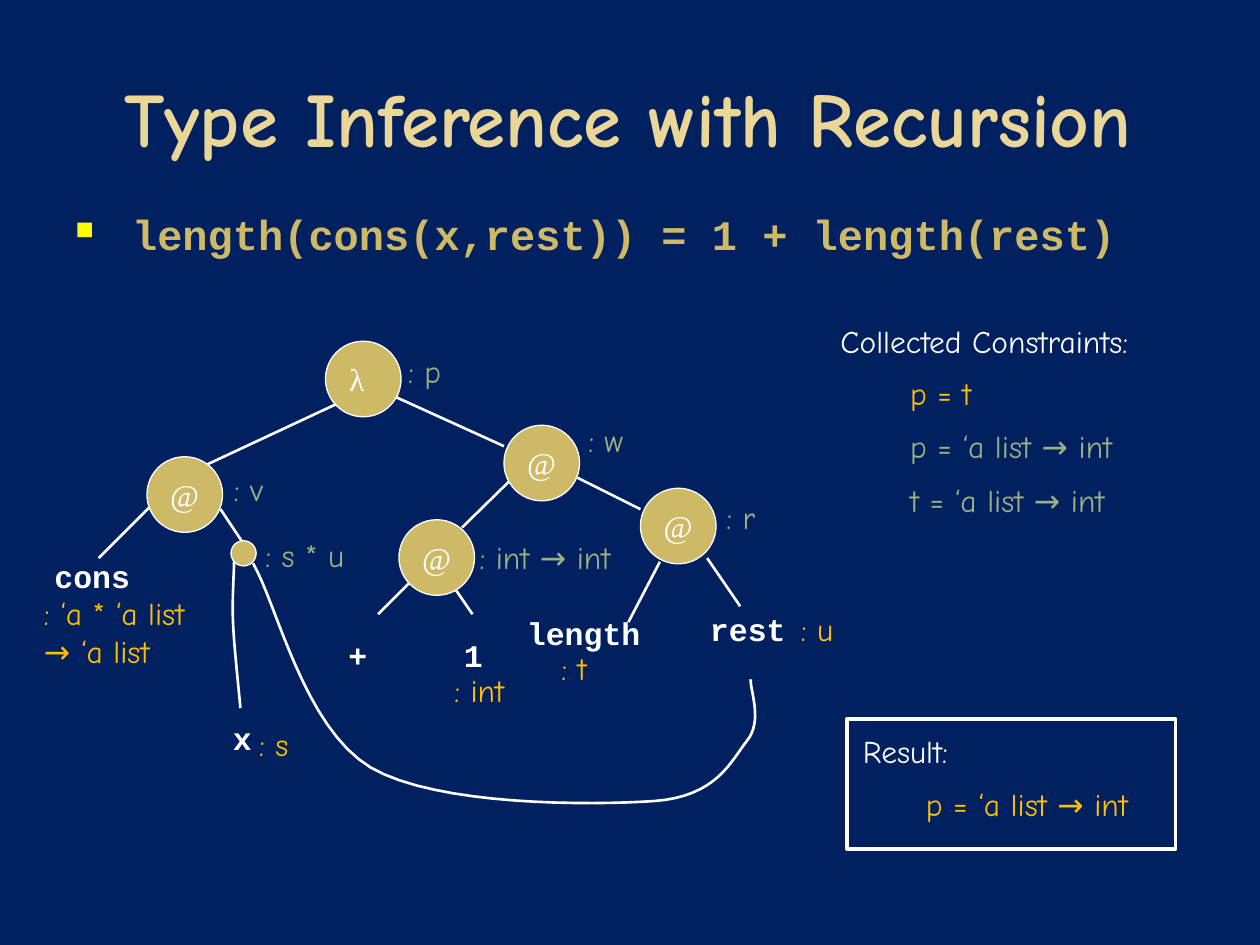
"""Build a slide on type inference for a recursive length function."""
from lxml import etree
from pptx import Presentation
from pptx.dml.color import RGBColor
from pptx.enum.shapes import MSO_CONNECTOR, MSO_SHAPE
from pptx.enum.text import MSO_ANCHOR, PP_ALIGN
from pptx.oxml.ns import qn
from pptx.util import Inches, Pt

LEFT, CENTER, RIGHT = PP_ALIGN.LEFT, PP_ALIGN.CENTER, PP_ALIGN.RIGHT
TOP, MIDDLE = MSO_ANCHOR.TOP, MSO_ANCHOR.MIDDLE
OVAL, RECTANGLE, STRAIGHT = MSO_SHAPE.OVAL, MSO_SHAPE.RECTANGLE, MSO_CONNECTOR.STRAIGHT
NAVY = RGBColor(0x00, 0x20, 0x60)
CREAM = RGBColor(0xEA, 0xD6, 0x96)
GOLD = RGBColor(0xCE, 0xB9, 0x66)
GREEN = RGBColor(0x9C, 0xB0, 0x84)
ORANGE = RGBColor(0xFF, 0xC0, 0x00)
WHITE = RGBColor(0xFF, 0xFF, 0xFF)
COMIC, COURIER, TIMES = "Comic Neue", "Courier New", "Times New Roman"
COLUMNS, ROWS = 240, 180
NODE, DOT, LABEL_HEIGHT, CURVE_STEPS = 14.4, 4.8, 9.6, 16

deck = Presentation()
deck.slide_width, deck.slide_height = Inches(10), Inches(7.5)
UNIT = deck.slide_width // COLUMNS
page = deck.slides.add_slide(deck.slide_layouts[6])
page.background.fill.solid()
page.background.fill.fore_color.rgb = NAVY


def grid(*cells):
    return [round(cell * UNIT) for cell in cells]


def add_text(text, place=None, box=None, size=18, font=COMIC, color=WHITE,
             bold=False, align=LEFT, anchor=TOP):
    box = box or page.shapes.add_textbox(*grid(*place))
    frame = box.text_frame
    frame.word_wrap, frame.vertical_anchor = True, anchor
    for index, line in enumerate(text.split("\n")):
        para = frame.add_paragraph() if index else frame.paragraphs[0]
        para.text, para.alignment = line, align
        para.space_before = Pt(size / 2 if index else 0)
        for span in para.runs:
            span.font.name, span.font.size, span.font.bold = font, Pt(size), bold
            span.font.color.rgb = color
    return box


add_text("Type Inference with Recursion", (7.5, 7.2, 224.4, 30), size=44,
         color=CREAM, bold=True, align=CENTER, anchor=MIDDLE)

equation = add_text("length(cons(x,rest)) = 1 + length(rest)", (8.4, 38.6, 216.7, 15.4),
                    size=24, font=COURIER, color=GOLD, bold=True)
layout = equation.text_frame.paragraphs[0]._p.get_or_add_pPr()
layout.set("marL", str(Inches(0.6)))
layout.set("indent", str(Inches(-0.45)))
bullet_color = etree.SubElement(layout, qn("a:buClr"))
etree.SubElement(bullet_color, qn("a:srgbClr"), val="FFFF00")
etree.SubElement(layout, qn("a:buSzPct"), val="60000")
etree.SubElement(layout, qn("a:buChar"), char="■")

branches = [
    (64, 77, 39.4, 88.5), (74, 75, 96, 85), (110, 91, 122, 97),
    (134.7, 106.3, 141, 115.5), (125.7, 107, 119.7, 118.5), (97.7, 91, 88, 100.5),
    (42, 97, 46, 103), (28.4, 96.7, 18.8, 106.3), (78, 111, 72, 117), (85, 109.7, 90, 117),
]
for ends in branches:
    branch = page.shapes.add_connector(STRAIGHT, *grid(*ends))
    branch.line.color.rgb, branch.line.width = WHITE, Pt(1.5)
    etree.SubElement(branch._element.spPr, qn("a:effectLst"))

variable_curve = [
    (45.8, 134.9), (45.6, 132.2), (44.6, 123.4), (44.4, 118.6),
    (44.2, 114), (44.6, 109.2), (44.6, 106.8),
]
rest_curve = [
    (143, 129.4), (142.8, 131.3), (145.4, 137.3), (142.3, 141.1),
    (139.2, 145), (136.6, 151.7), (124.6, 152.6), (112.6, 153.4), (83.3, 153.6),
    (70.6, 146.2), (57.8, 138.5), (52.8, 115.2), (48.2, 107.3),
]
for controls in (variable_curve, rest_curve):
    points = []
    for first in range(0, len(controls) - 1, 3):
        for step in range(1, CURVE_STEPS + 1):
            t = step / CURVE_STEPS
            weights = ((1 - t) ** 3, 3 * t * (1 - t) ** 2, 3 * t * t * (1 - t), t ** 3)
            segment = controls[first:first + 4]
            points.append(grid(*(sum(w * point[axis] for w, point in zip(weights, segment))
                                 for axis in (0, 1))))
    outline = page.shapes.build_freeform(*grid(*controls[0]))
    outline.add_line_segments(points, close=False)
    curve = outline.convert_to_shape()
    curve.shadow.inherit = False
    curve.fill.background()
    curve.line.color.rgb, curve.line.width = WHITE, Pt(1.5)

nodes = [
    ("λ", 62, 65, NODE), ("@", 28, 87, NODE), ("@", 96, 81, NODE),
    ("@", 76, 99, NODE), ("@", 122, 93, NODE), ("", 44, 103, DOT),
]
for symbol, left, top, size in nodes:
    node = page.shapes.add_shape(OVAL, *grid(left, top, size, size))
    node.shadow.inherit = False
    node.fill.solid()
    node.fill.fore_color.rgb = GOLD
    node.line.color.rgb, node.line.width = WHITE, Pt(0.75)
    if symbol:
        add_text(symbol, box=node, font=TIMES, align=CENTER, anchor=MIDDLE)
        node.text_frame.margin_left = 0
        node.text_frame.margin_right = Inches(0.1 if symbol == "λ" else 0)

leaves = [
    ("cons", 8, 105, 22, LEFT), ("x", 42, 135.7, 12, LEFT), ("+", 64, 119.9, 12, LEFT),
    ("1", 86, 119.9, 12, LEFT), ("length", 98, 115.7, 30, LEFT), ("rest", 130, 115, 22, RIGHT),
]
for name, left, top, width, align in leaves:
    add_text(name, (left, top, width, LABEL_HEIGHT), font=COURIER, bold=True, align=align)

type_labels = [
    (": p", 75.4, 65.8, 22, GREEN), (": w", 109.7, 79, 22, GREEN),
    (": v", 42.2, 88.3, 22, GREEN), (": r", 136, 93.6, 22, GREEN),
    (": s * u", 48.2, 101, 22, GREEN), (": int → int", 89, 101.3, 49, GREEN),
    (": u", 150.2, 115, 22, ORANGE), (": t", 104.6, 122.4, 22, ORANGE),
    (": int", 84.2, 126.7, 22, ORANGE), (": s", 47, 137, 22, ORANGE),
    (": ‘a * ‘a list\v→ ‘a list", 6, 112, 46, ORANGE),
]
for label, left, top, width, color in type_labels:
    add_text(label, (left, top, width, LABEL_HEIGHT), color=color)

add_text("Collected Constraints:", (157.7, 60.2, 67, LABEL_HEIGHT))
constraints = add_text("p = t\np = ‘a list → int\nt = ‘a list → int", (171, 70, 61, 31.4),
                       color=GREEN)
constraints.text_frame.paragraphs[0].runs[0].font.color.rgb = ORANGE

result_frame = page.shapes.add_shape(RECTANGLE, *grid(161.3, 137, 62.6, 24.7))
result_frame.shadow.inherit = False
result_frame.fill.background()
result_frame.line.color.rgb, result_frame.line.width = WHITE, Pt(2)
add_text("Result:", (162, 138.2, 24.5, LABEL_HEIGHT))
add_text("p = ‘a list → int", (174, 148.3, 61, LABEL_HEIGHT), color=ORANGE)

deck.save("out.pptx")
